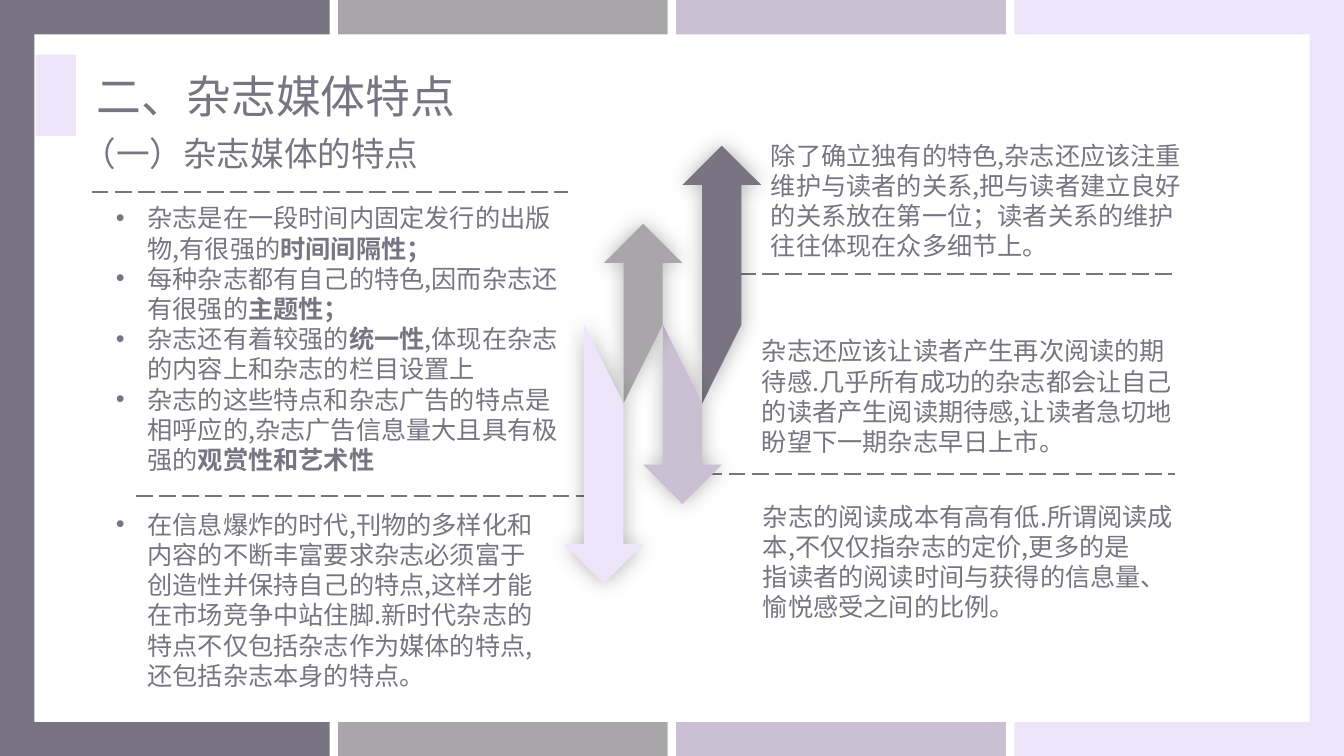
"""Build the slide on the characteristics of magazine media."""
from dataclasses import dataclass

from lxml import etree
from pptx import Presentation
from pptx.dml.color import RGBColor
from pptx.enum.dml import MSO_LINE
from pptx.enum.shapes import MSO_CONNECTOR, MSO_SHAPE
from pptx.enum.text import MSO_ANCHOR, MSO_AUTO_SIZE, PP_ALIGN
from pptx.oxml.ns import qn
from pptx.util import Pt

RECTANGLE = MSO_SHAPE.RECTANGLE
STRAIGHT = MSO_CONNECTOR.STRAIGHT
LONG_DASH = MSO_LINE.LONG_DASH
TOP = MSO_ANCHOR.TOP
LEFT = PP_ALIGN.LEFT
NO_AUTOFIT = MSO_AUTO_SIZE.NONE


@dataclass(frozen=True)
class Theme:
    slate: RGBColor = RGBColor.from_string("787481")
    grey: RGBColor = RGBColor.from_string("A9A6AA")
    mauve: RGBColor = RGBColor.from_string("CBBFD3")
    lavender: RGBColor = RGBColor.from_string("EDE5FA")
    white: RGBColor = RGBColor.from_string("FFFFFF")
    font: str = "Noto Sans CJK SC"
    title: int = 32
    subtitle: int = 24
    body: int = 18


THEME = Theme()


def add_block(left, top, width, height, color):
    block = page.shapes.add_shape(RECTANGLE, Pt(left), Pt(top), Pt(width), Pt(height))
    block.shadow.inherit = False
    block.fill.solid()
    block.fill.fore_color.rgb = color
    block.line.fill.background()


def fill_box(box, place, size, paragraphs, bullet=False):
    box.left, box.top, box.width, box.height = map(Pt, place)
    frame = box.text_frame
    frame.word_wrap = True
    frame.auto_size = NO_AUTOFIT
    frame.vertical_anchor = TOP
    for index, parts in enumerate(paragraphs):
        para = frame.add_paragraph() if index else frame.paragraphs[0]
        para.alignment = LEFT
        para.space_before = Pt(0)
        if bullet:
            properties = para._p.get_or_add_pPr()
            properties.set("marL", str(Pt(22.5)))
            properties.set("indent", str(Pt(-22.5)))
            etree.SubElement(properties, qn("a:buFont"), typeface="Arial")
            etree.SubElement(properties, qn("a:buChar"), char="•")
        for position, words in enumerate(parts):
            span = para.add_run()
            span.text = words
            span.font.size = Pt(size)
            span.font.bold = position == 1
            span.font.color.rgb = THEME.slate
            span.font.name = THEME.font
            etree.SubElement(span._r.get_or_add_rPr(), qn("a:ea"), typeface=THEME.font)


deck = Presentation()
deck.slide_width, deck.slide_height = Pt(960), Pt(540)
page = deck.slides.add_slide(deck.slide_layouts[3])
title, features, outlook = page.placeholders

for column, color in enumerate((THEME.slate, THEME.grey, THEME.mauve, THEME.lavender)):
    add_block(column * 241.5, 0, 235.5, 540, color)
add_block(24.6, 24.6, 910.8, 491, THEME.white)
add_block(25.5, 39, 28.8, 58.3, THEME.lavender)

for start, end, height in (
    (527.8, 839.5, 195.6),
    (65.5, 406, 137),
    (487.4, 839.5, 338.8),
    (97.2, 431.3, 354.2),
):
    rule = page.shapes.add_connector(STRAIGHT, Pt(start), Pt(height), Pt(end), Pt(height))
    rule.line.color.rgb = THEME.slate
    rule.line.width = Pt(1.5)
    rule.line.dash_style = LONG_DASH
    etree.SubElement(rule._element.spPr, qn("a:effectLst"))

HEAD, SHAFT, MIDDLE = 28.1, 14, 260
for column, tip, turn, color in (
    (3, 104, 1, THEME.slate),
    (2, 360, -1, THEME.mauve),
    (1, 159.8, 1, THEME.grey),
    (0, 416.8, -1, THEME.lavender),
):
    center = 431.3 + column * HEAD
    neck = tip + turn * HEAD
    outline = [
        (center, tip),
        (center + HEAD, neck),
        (center + SHAFT, neck),
        (center + SHAFT, MIDDLE - turn * HEAD),
        (center - SHAFT, MIDDLE + turn * HEAD),
        (center - SHAFT, neck),
        (center - HEAD, neck),
    ]
    points = [(Pt(x), Pt(y)) for x, y in outline]
    builder = page.shapes.build_freeform(*points[0])
    builder.add_line_segments(points[1:], close=True)
    arrow = builder.convert_to_shape()
    arrow.fill.solid()
    arrow.fill.fore_color.rgb = color
    arrow.line.fill.background()
    effects = etree.SubElement(arrow._element.spPr, qn("a:effectLst"))
    shadow = etree.SubElement(effects, qn("a:outerShdw"), blurRad=str(Pt(15)), dist="0", dir="0")
    black = etree.SubElement(shadow, qn("a:srgbClr"), val="000000")
    etree.SubElement(black, qn("a:alpha"), val="30000")

for holder in (title, features, outlook):
    page.shapes._spTree.append(holder._element)

fill_box(title, (62, 45.4, 323, 46), THEME.title, [["二、杂志媒体特点"]])
fill_box(features, (75.6, 141.1, 330.5, 203.8), THEME.body, [
    ["杂志是在一段时间内固定发行的出版物,有很强的", "时间间隔性；"],
    ["每种杂志都有自己的特色,因而杂志还有很强的", "主题性；"],
    ["杂志还有着较强的", "统一性", ",体现在杂志的内容上和杂志的栏目设置上"],
    ["杂志的这些特点和杂志广告的特点是相呼应的,杂志广告信息量大且具有极强的", "观赏性和艺术性"],
], bullet=True)
fill_box(outlook, (75.6, 360, 316.8, 138.2), THEME.body, [
    ["在信息爆炸的时代,刊物的多样化和内容的不断丰富要求杂志必须富于创造性并保持自己的特点,"
     "这样才能在市场竞争中站住脚.新时代杂志的特点不仅包括杂志作为媒体的特点,还包括杂志本身的特点。"],
], bullet=True)

for place, size, paragraphs in (
    ((51.8, 91.4, 296.6, 36), THEME.subtitle, [["（一）杂志媒体的特点"]]),
    ((543.6, 96.5, 310.3, 94.3), THEME.body, [
        ["除了确立独有的特色,杂志还应该注重维护与读者的关系,把与读者建立良好的关系放在第一位；"
         "读者关系的维护往往体现在众多细节上。"],
    ]),
    ((537.1, 236.2, 311, 94.3), THEME.body, [
        ["杂志还应该让读者产生再次阅读的期待感.几乎所有成功的杂志都会让自己的读者产生阅读期待感,"
         "让读者急切地盼望下一期杂志早日上市。"],
    ]),
    ((537.8, 354.2, 311, 94.3), THEME.body, [
        ["杂志的阅读成本有高有低.所谓阅读成本,不仅仅指杂志的定价,更多的是"],
        ["指读者的阅读时间与获得的信息量、愉悦感受之间的比例。"],
    ]),
):
    fill_box(page.shapes.add_textbox(0, 0, 0, 0), place, size, paragraphs)

deck.save("out.pptx")
